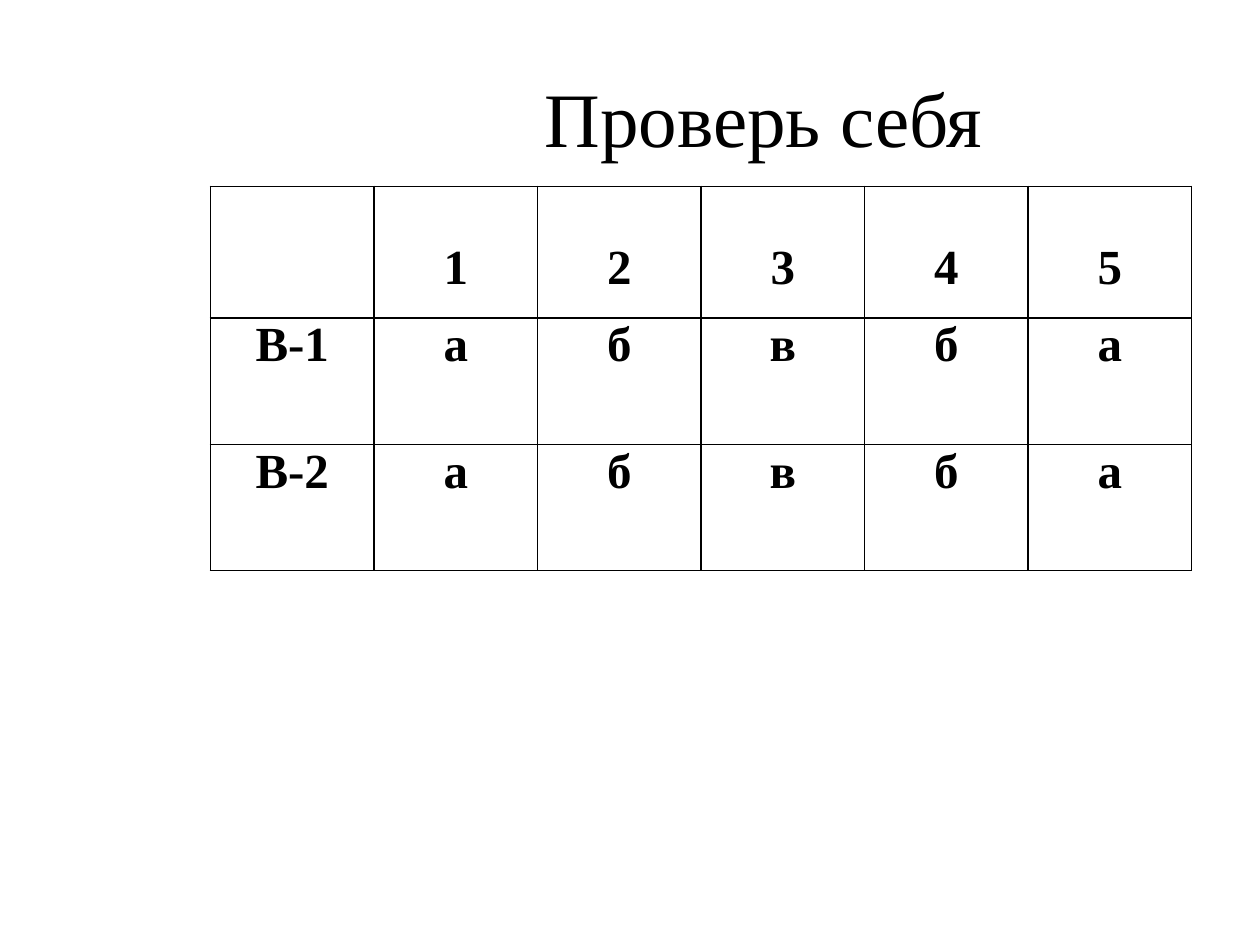
from lxml import etree
from pptx import Presentation
from pptx.dml.color import RGBColor
from pptx.enum.text import MSO_ANCHOR, PP_ALIGN
from pptx.oxml.ns import qn
from pptx.util import Inches, Pt

CENTER = PP_ALIGN.CENTER
MIDDLE = MSO_ANCHOR.MIDDLE
FONT = "Times New Roman"
COLORS = {"text": "000000", "border": "000000", "cell": "FFFFFF"}
ANSWERS = [
    ["", "1", "2", "3", "4", "5"],
    ["В-1", "а", "б", "в", "б", "а"],
    ["В-2", "а", "б", "в", "б", "а"],
]
ROW_HEIGHTS = [1.04, 1, 1]
HEADER_DROP = 0.43


def format_paragraph(paragraph, size, bold=False):
    paragraph.alignment = CENTER
    for run in paragraph.runs:
        run.font.name = FONT
        run.font.size = Pt(size)
        run.font.bold = bold
        run.font.color.rgb = RGBColor.from_string(COLORS["text"])


def add_title(slide, box, text, indent):
    """Centre the title in the part of the box right of the indent."""
    shape = slide.shapes.add_textbox(*map(Inches, box))
    text_frame = shape.text_frame
    text_frame.word_wrap = True
    text_frame.vertical_anchor = MIDDLE
    text_frame.margin_left = Inches(indent)
    text_frame.text = text
    format_paragraph(text_frame.paragraphs[0], 44)


def add_borders(cell):
    properties = cell._tc.get_or_add_tcPr()
    for side in ("a:lnL", "a:lnR", "a:lnT", "a:lnB"):
        line = etree.SubElement(properties, qn(side), w=str(Pt(1)))
        fill = etree.SubElement(line, qn("a:solidFill"))
        etree.SubElement(fill, qn("a:srgbClr"), val=COLORS["border"])


def format_cell(cell, text, top):
    add_borders(cell)
    cell.fill.solid()
    cell.fill.fore_color.rgb = RGBColor.from_string(COLORS["cell"])
    cell.margin_left = cell.margin_right = Inches(0.07)
    cell.margin_top = Inches(top)
    cell.margin_bottom = 0
    cell.text_frame.text = text
    format_paragraph(cell.text_frame.paragraphs[0], 28, bold=True)


def add_answer_table(slide, box, answers):
    left, top, width, height = map(Inches, box)
    column_count = len(answers[0])
    frame = slide.shapes.add_table(
        len(answers), column_count, left, top, width, height
    )
    table = frame.table
    table.first_row = table.horz_banding = False
    for column in table.columns:
        column.width = width // column_count
    for row_index, (row, values) in enumerate(zip(table.rows, answers)):
        row.height = int(height * ROW_HEIGHTS[row_index] / sum(ROW_HEIGHTS))
        for cell, value in zip(row.cells, values):
            format_cell(cell, value, 0 if row_index else HEADER_DROP)


def main():
    presentation = Presentation()
    presentation.slide_width = Inches(10)
    presentation.slide_height = Inches(7.5)
    slide = presentation.slides.add_slide(presentation.slide_layouts[6])
    add_title(slide, (0.5, 0.3, 9, 1.25), "Проверь себя", indent=2.22)
    add_answer_table(slide, (1.67, 1.48, 7.79, 3.05), ANSWERS)
    presentation.save("out.pptx")


if __name__ == "__main__":
    main()
